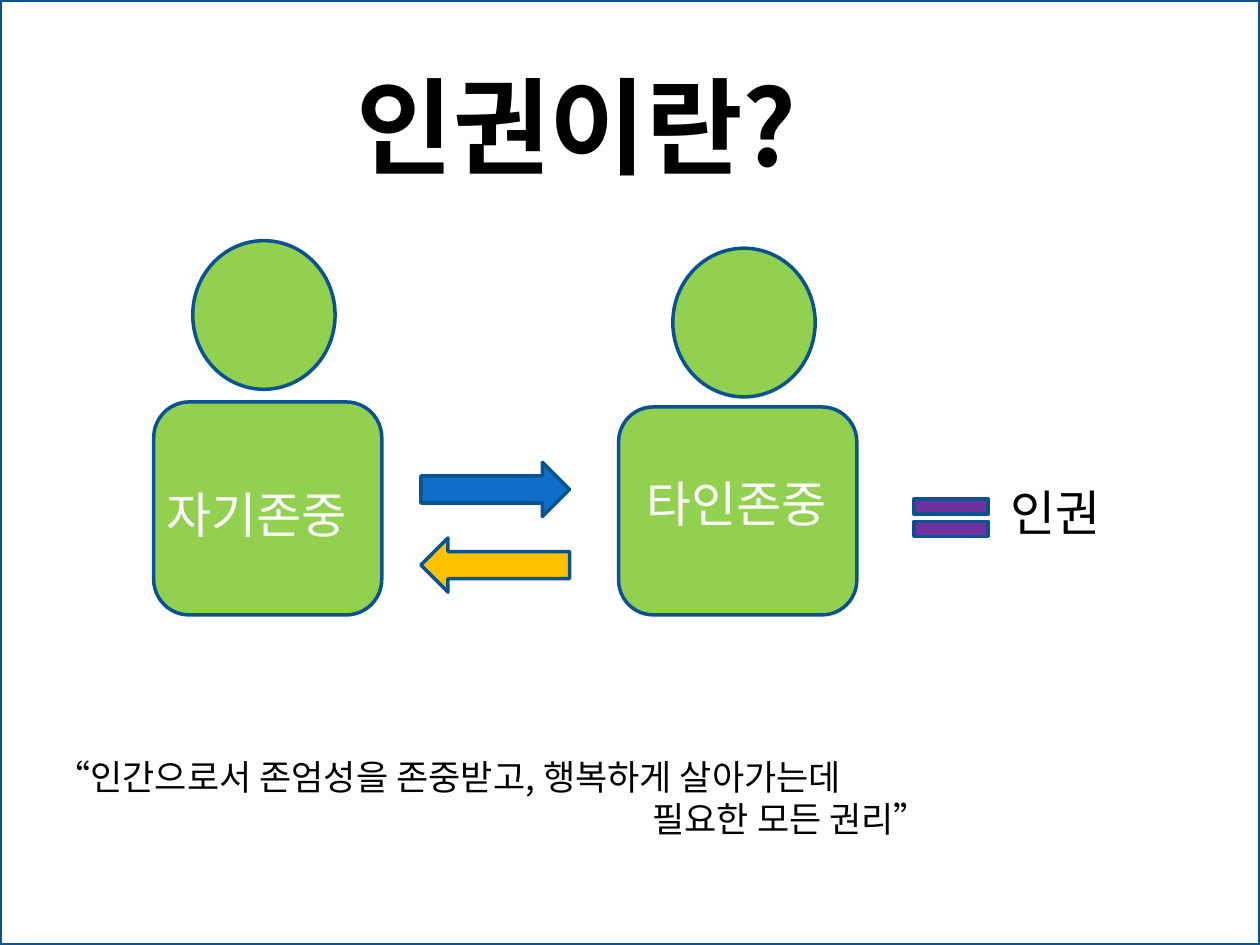
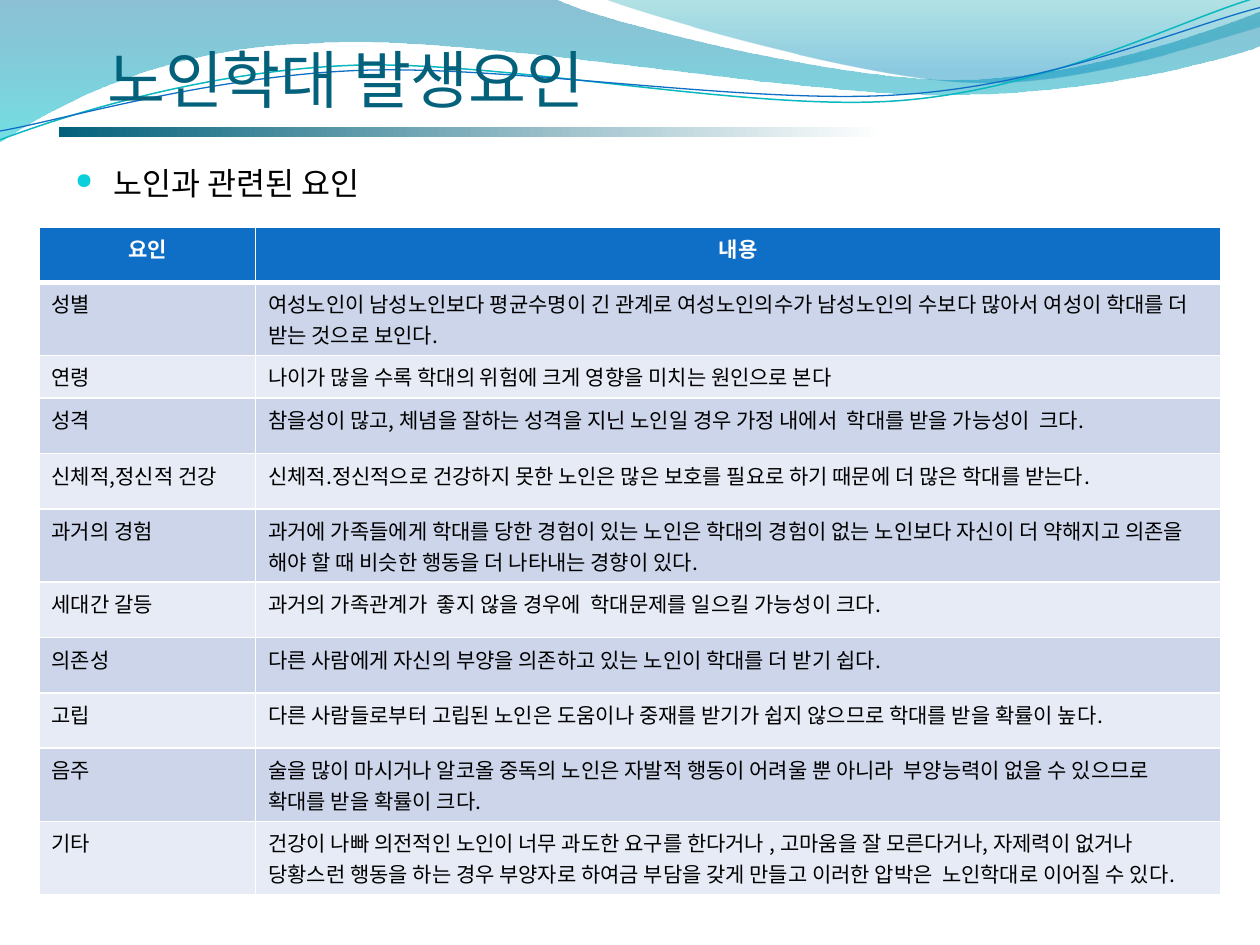
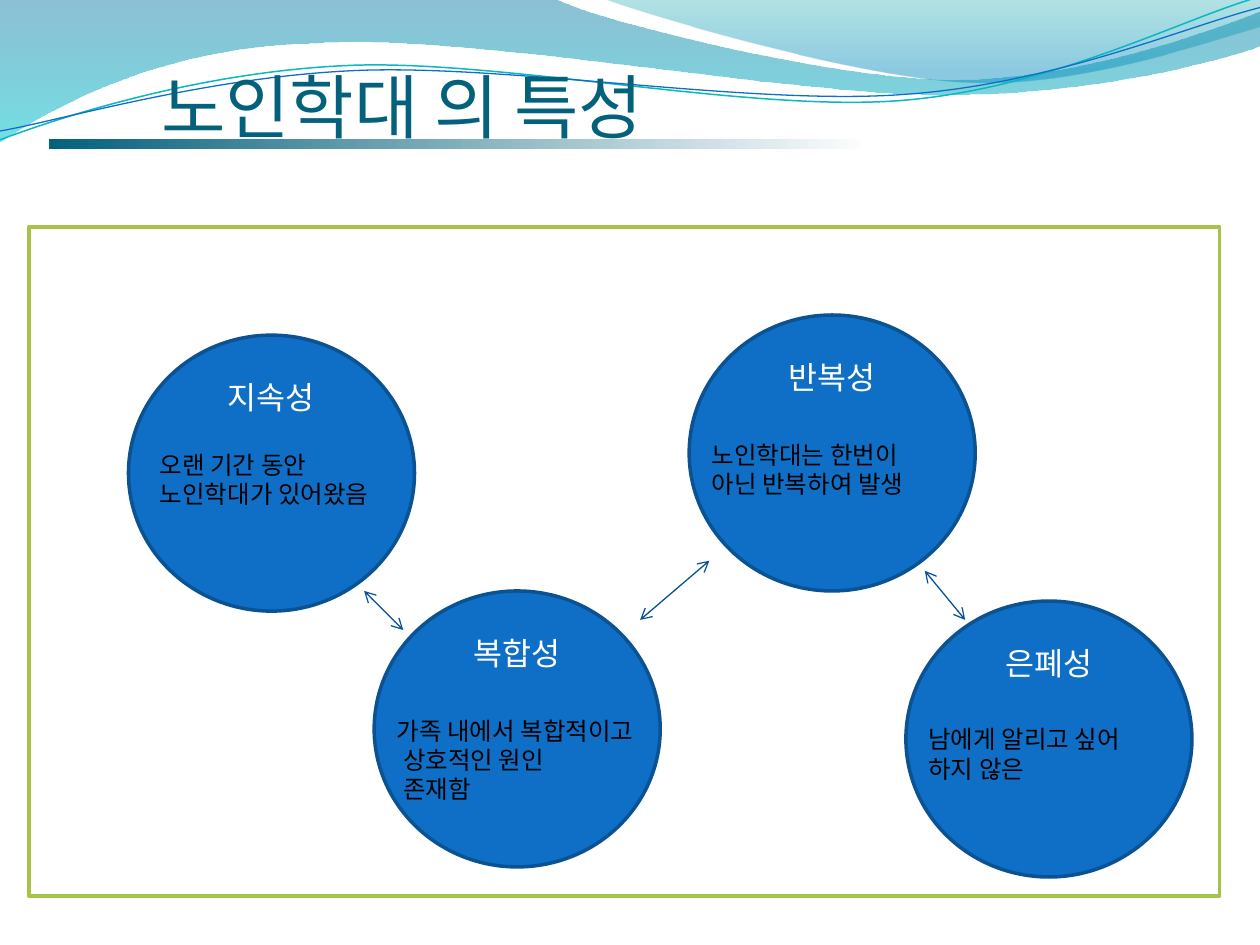
from dataclasses import dataclass

from lxml.etree import SubElement
from pptx import Presentation
from pptx.dml.color import RGBColor
from pptx.enum.shapes import MSO_CONNECTOR, MSO_SHAPE
from pptx.enum.text import MSO_ANCHOR, PP_ALIGN
from pptx.oxml.ns import qn
from pptx.util import Inches, Pt


@dataclass(frozen=True)
class Theme:
    body_font: str = "Noto Sans CJK KR"
    title_font: str = "Calibri"
    white: str = "FFFFFF"
    black: str = "000000"
    blue: str = "0F6FC6"
    outline: str = "0B5292"
    connector: str = "095295"
    teal: str = "04617B"
    bullet: str = "0BD0D9"
    person: str = "92D050"
    gold: str = "FFC000"
    purple: str = "7030A0"
    panel: str = "A5C249"
    wave_line: str = "0AB8BF"
    row_dark: str = "CCD5EA"
    row_light: str = "E7EBF5"
    heading_size: int = 60
    label_size: int = 28
    quote_size: int = 20
    topic_size: int = 18
    note_size: int = 14
    table_size: int = 12


THEME = Theme()


def add_figure(page, kind, place, fill, line=None):
    """Add a preset shape; a tuple as fill is a left-to-right gradient."""
    figure = page.shapes.add_shape(kind, *map(Inches, place))
    figure.shadow.inherit = False
    if isinstance(fill, tuple):
        figure.fill.gradient()
        figure.fill.gradient_angle = 0
        for stop, color in zip(figure.fill.gradient_stops, fill):
            stop.color.rgb = RGBColor.from_string(color)
    else:
        figure.fill.solid()
        figure.fill.fore_color.rgb = RGBColor.from_string(fill)
    if line:
        figure.line.color.rgb = RGBColor.from_string(line)
        figure.line.width = Pt(2)
    else:
        figure.line.fill.background()
    return figure


def write(frame, lines, size, color=THEME.black, font=THEME.body_font, bold=False,
          align=PP_ALIGN.LEFT):
    """Fill a text frame; each line is a text or (text, left margin, first-line indent)."""
    frame.word_wrap = True
    for number, line in enumerate(lines):
        text, left, first = (line, 0, 0) if isinstance(line, str) else line
        para = frame.add_paragraph() if number else frame.paragraphs[0]
        para.text = text
        para.alignment = align
        para.font.size = Pt(size)
        para.font.bold = bold
        para.font.color.rgb = RGBColor.from_string(color)
        para.font.name = font
        properties = para._p.get_or_add_pPr()
        properties.set("marL", str(Inches(left)))
        properties.set("indent", str(Inches(first)))


deck = Presentation()
deck.slide_width, deck.slide_height = Inches(10), Inches(7.5)
blank = deck.slide_layouts[6]
rights, factors, traits = [deck.slides.add_slide(blank) for _ in range(3)]

# Shared layout: waves along the top.
# A wave is a start point and its segments: one point is a line, three are a Bézier curve.
# Gradient stops are position, colour and opacity.
BANDS = [
    ([(0, 0), [(4.4, -0.01)],
      [(4.76, 0.17), (6.64, 0.63), (7.58, 0.63)], [(8.53, 0.63), (9.58, 0.26), (10, 0.09)],
      [(10.01, 0.36)],
      [(9.83, 0.44), (8.7, 0.76), (7.46, 0.75)], [(6.22, 0.75), (3.82, 0.28), (2.57, 0.34)],
      [(1.29, 0.36), (0.46, 0.83), (-0.01, 1.13)], [(0, 0)]],
     [(0, "0074A1", 45), (1, "00C6CF", 55)]),
    ([(4.79, -0.01),
      [(5.09, 0.11), (6.82, 0.62), (7.69, 0.65)], [(8.56, 0.69), (9.61, 0.32), (10, 0.21)],
      [(10, 0)], [(4.79, -0.01)]],
     [(0, "00A1A9", 30), (0.8, "008BBF", 45)]),
]
STRANDS = [
    ([(0, 1.11),
      [(0.48, 0.93), (1.58, 0.57), (2.77, 0.52)], [(3.95, 0.47), (5.93, 0.89), (7.13, 0.8)],
      [(8.33, 0.71), (9.38, 0.15), (9.98, -0.02)]],
     (THEME.wave_line, 0.85)),
    ([(0, 1.04),
      [(0.47, 0.96), (1.64, 0.61), (2.83, 0.56)], [(4.03, 0.51), (5.97, 0.84), (7.17, 0.75)],
      [(8.36, 0.67), (9.41, 0.21), (10, 0.06)]],
     (THEME.blue, 0.75)),
]
for (start, *segments), style in BANDS + STRANDS:
    is_band = isinstance(style, list)
    builder = rights.shapes.build_freeform(*map(Inches, start))
    builder.add_line_segments([tuple(map(Inches, point))
                               for segment in segments for point in segment], close=is_band)
    wave = builder.convert_to_shape()
    wave.shadow.inherit = False
    straight = iter(list(wave._element.iter(qn("a:lnTo"))))
    for segment in segments:
        steps = [next(straight) for _ in segment]
        if len(steps) == 3:
            curve = steps[0].makeelement(qn("a:cubicBezTo"))
            steps[0].addprevious(curve)
            for step in steps:
                curve.append(step[0])
                step.getparent().remove(step)
    if is_band:
        wave.line.fill.background()
        wave.fill.gradient()
        wave.fill.gradient_angle = 270
        for stop, (position, color, opacity) in zip(wave.fill.gradient_stops, style):
            stop.position = position
            stop.color.rgb = RGBColor.from_string(color)
            SubElement(stop._gs.find(qn("a:srgbClr")), qn("a:alpha"), val=str(opacity * 1000))
    else:
        color, weight = style
        wave.fill.background()
        wave.line.color.rgb = RGBColor.from_string(color)
        wave.line.width = Pt(weight)
    blank.shapes._spTree.append(wave._element)

# Slide 1: what human rights are
add_figure(rights, MSO_SHAPE.RECTANGLE, (0, 0, 10, 7.5), THEME.white, THEME.outline)
for kind, place, fill in [
    (MSO_SHAPE.OVAL, (1.53, 1.91, 1.13, 1.18), THEME.person),
    (MSO_SHAPE.ROUNDED_RECTANGLE, (1.22, 3.19, 1.81, 1.69), THEME.person),
    (MSO_SHAPE.OVAL, (5.34, 1.97, 1.13, 1.18), THEME.person),
    (MSO_SHAPE.ROUNDED_RECTANGLE, (4.91, 3.23, 1.89, 1.65), THEME.person),
    (MSO_SHAPE.LEFT_ARROW, (3.34, 4.27, 1.18, 0.43), THEME.gold),
    (MSO_SHAPE.RIGHT_ARROW, (3.34, 3.67, 1.18, 0.43), THEME.blue),
    (MSO_SHAPE.MATH_EQUAL, (7.15, 3.86, 0.8, 0.5), THEME.purple),
]:
    add_figure(rights, kind, place, fill, THEME.outline)

heading = rights.shapes.add_textbox(Inches(2.27), Inches(0.44), Inches(4.6), Inches(1.11))
heading.text_frame.margin_left = Inches(0.56)
write(heading.text_frame, ["인권이란?"], THEME.heading_size, bold=True)

quote = rights.shapes.add_textbox(Inches(0.34), Inches(5.95), Inches(9.21), Inches(0.77))
write(quote.text_frame,
      ["“인간으로서 존엄성을 존중받고, 행복하게 살아가는데", ("필요한 모든 권리”", 4.74, 0)],
      THEME.quote_size)

for text, left, top, width, color, align in [
    ("자기존중", 1.22, 3.8, 1.81, THEME.white, PP_ALIGN.LEFT),
    ("타인존중", 4.94, 3.71, 1.81, THEME.white, PP_ALIGN.CENTER),
    ("인권", 7.92, 3.78, 1.25, THEME.black, PP_ALIGN.LEFT),
]:
    label = rights.shapes.add_textbox(Inches(left), Inches(top), Inches(width), Inches(0.57))
    write(label.text_frame, [text], THEME.label_size, color, align=align)

# Slides 2 and 3: title and bar
for page, title, size, height, inset, bar_left, bar_top in [
    (factors, "노인학대 발생요인", 36, 0.62, 0.35, 0.47, 1.01),
    (traits, "노인학대 의 특성", 40, 0.87, 0.78, 0.39, 1.1),
]:
    title_box = page.shapes.add_textbox(Inches(0.5), Inches(0.3), Inches(9), Inches(height))
    frame = title_box.text_frame
    frame.vertical_anchor = MSO_ANCHOR.BOTTOM
    frame.margin_left, frame.margin_right, frame.margin_bottom = Inches(inset), 0, 0
    write(frame, [title], size, THEME.teal, THEME.title_font)
    add_figure(page, MSO_SHAPE.RECTANGLE, (bar_left, bar_top, 6.54, 0.08),
               (THEME.teal, THEME.white))

# Slide 2: factors table
topic = factors.shapes.add_textbox(Inches(0.5), Inches(1.25), Inches(9), Inches(0.5))
write(topic.text_frame, [("노인과 관련된 요인", 0.3, -0.3)], THEME.topic_size)
topic_line = topic.text_frame.paragraphs[0]
topic_line.space_before = Pt(3.6)
properties = topic_line._p.pPr
bullet_color = properties.makeelement(qn("a:buClr"))
SubElement(bullet_color, qn("a:srgbClr"), val=THEME.bullet)
bullet_size = properties.makeelement(qn("a:buSzPct"), val="70000")
bullet_mark = properties.makeelement(qn("a:buChar"), char="●")
for part in (bullet_color, bullet_size, bullet_mark):
    properties.find(qn("a:defRPr")).addprevious(part)

ROWS = [
    ("요인", "내용"),
    ("성별", "여성노인이 남성노인보다 평균수명이 긴 관계로 여성노인의수가 남성노인의 수보다 많아서 "
             "여성이 학대를 더 받는 것으로 보인다."),
    ("연령", "나이가 많을 수록 학대의 위험에 크게 영향을 미치는 원인으로 본다"),
    ("성격", "참을성이 많고, 체념을 잘하는 성격을 지닌 노인일 경우 가정 내에서  학대를 받을 가능성이  크다."),
    ("신체적,정신적 건강",
     "신체적.정신적으로 건강하지 못한 노인은 많은 보호를 필요로 하기 때문에 더 많은 학대를 받는다."),
    ("과거의 경험", "과거에 가족들에게 학대를 당한 경험이 있는 노인은 학대의 경험이 없는 노인보다 자신이 더 "
                   "약해지고 의존을 해야 할 때 비슷한 행동을 더 나타내는 경향이 있다."),
    ("세대간 갈등", "과거의 가족관계가  좋지 않을 경우에  학대문제를 일으킬 가능성이 크다."),
    ("의존성", "다른 사람에게 자신의 부양을 의존하고 있는 노인이 학대를 더 받기 쉽다."),
    ("고립", "다른 사람들로부터 고립된 노인은 도움이나 중재를 받기가 쉽지 않으므로 학대를 받을 확률이 높다."),
    ("음주", "술을 많이 마시거나 알코올 중독의 노인은 자발적 행동이 어려울 뿐 아니라  부양능력이 없을 수 "
             "있으므로 확대를 받을 확률이 크다."),
    ("기타", "건강이 나빠 의전적인 노인이 너무 과도한 요구를 한다거나 , 고마움을 잘 모른다거나, 자제력이 "
             "없거나 당황스런 행동을 하는 경우 부양자로 하여금 부담을 갖게 만들고 이러한 압박은  "
             "노인학대로 이어질 수 있다."),
]
TWO_LINES = 0.58
ROW_HEIGHTS = {1: TWO_LINES, 2: 0.34, 5: TWO_LINES, 9: TWO_LINES, 10: TWO_LINES}
table = factors.shapes.add_table(len(ROWS), 2, Inches(0.31), Inches(1.8),
                                 Inches(9.38), Inches(5.3)).table
for column, width in zip(table.columns, (1.72, 7.66)):
    column.width = Inches(width)
for number, texts in enumerate(ROWS):
    table.rows[number].height = Inches(ROW_HEIGHTS.get(number, 0.44))
    is_header = number == 0
    banding = THEME.row_dark if number % 2 else THEME.row_light
    for cell, text in zip(table.rows[number].cells, texts):
        for side in ("L", "R", "T", "B"):
            thick = (is_header and side == "B") or (number == 1 and side == "T")
            border = SubElement(cell._tc.get_or_add_tcPr(), qn(f"a:ln{side}"),
                                w=str(Pt(3 if thick else 1)))
            SubElement(SubElement(border, qn("a:solidFill")), qn("a:srgbClr"), val=THEME.white)
        cell.fill.solid()
        cell.fill.fore_color.rgb = RGBColor.from_string(THEME.blue if is_header else banding)
        write(cell.text_frame, [text], THEME.table_size,
              THEME.white if is_header else THEME.black, bold=is_header,
              align=PP_ALIGN.CENTER if is_header else PP_ALIGN.LEFT)

# Slide 3: four linked traits
add_figure(traits, MSO_SHAPE.RECTANGLE, (0.23, 1.8, 9.45, 5.31), THEME.white, THEME.panel)
TRAITS = [
    ("지속성", (1.02, 2.66), (1.17, 3.52, 2.03, 0.57), ["오랜 기간 동안", "노인학대가 있어왔음"]),
    ("복합성", (2.97, 4.69), (3.05, 5.63, 2.11, 0.81),
     [("가족 내에서 복합적이고 상호적인 원인", 0.05, -0.05), ("존재함", 0.05, 0)]),
    ("반복성", (5.47, 2.5), (5.55, 3.44, 2.11, 0.57), ["노인학대는 한번이", "아닌 반복하여 발생"]),
    ("은폐성", (7.19, 4.77), (7.27, 5.7, 2.11, 0.57), ["남에게 알리고 싶어", "하지 않은"]),
]
for name, corner, note_place, note_lines in TRAITS:
    circle = add_figure(traits, MSO_SHAPE.OVAL, (*corner, 2.27, 2.19), THEME.blue, THEME.outline)
    frame = circle.text_frame
    frame.vertical_anchor = MSO_ANCHOR.MIDDLE
    frame.margin_top, frame.margin_bottom = 0, Inches(1.21)
    write(frame, [name], THEME.topic_size, THEME.white, align=PP_ALIGN.CENTER)
    note = traits.shapes.add_textbox(*map(Inches, note_place))
    write(note.text_frame, note_lines, THEME.note_size)

for ends in [(2.89, 4.69, 3.2, 5), (5.63, 4.45, 5.08, 4.92), (7.34, 4.53, 7.66, 4.92)]:
    link = traits.shapes.add_connector(MSO_CONNECTOR.STRAIGHT, *map(Inches, ends))
    link.line.color.rgb = RGBColor.from_string(THEME.connector)
    link.line.width = Pt(0.75)
    for end in ("a:headEnd", "a:tailEnd"):
        SubElement(link.line._get_or_add_ln(), qn(end), type="arrow")
    SubElement(link._element.spPr, qn("a:effectLst"))

deck.save("out.pptx")
